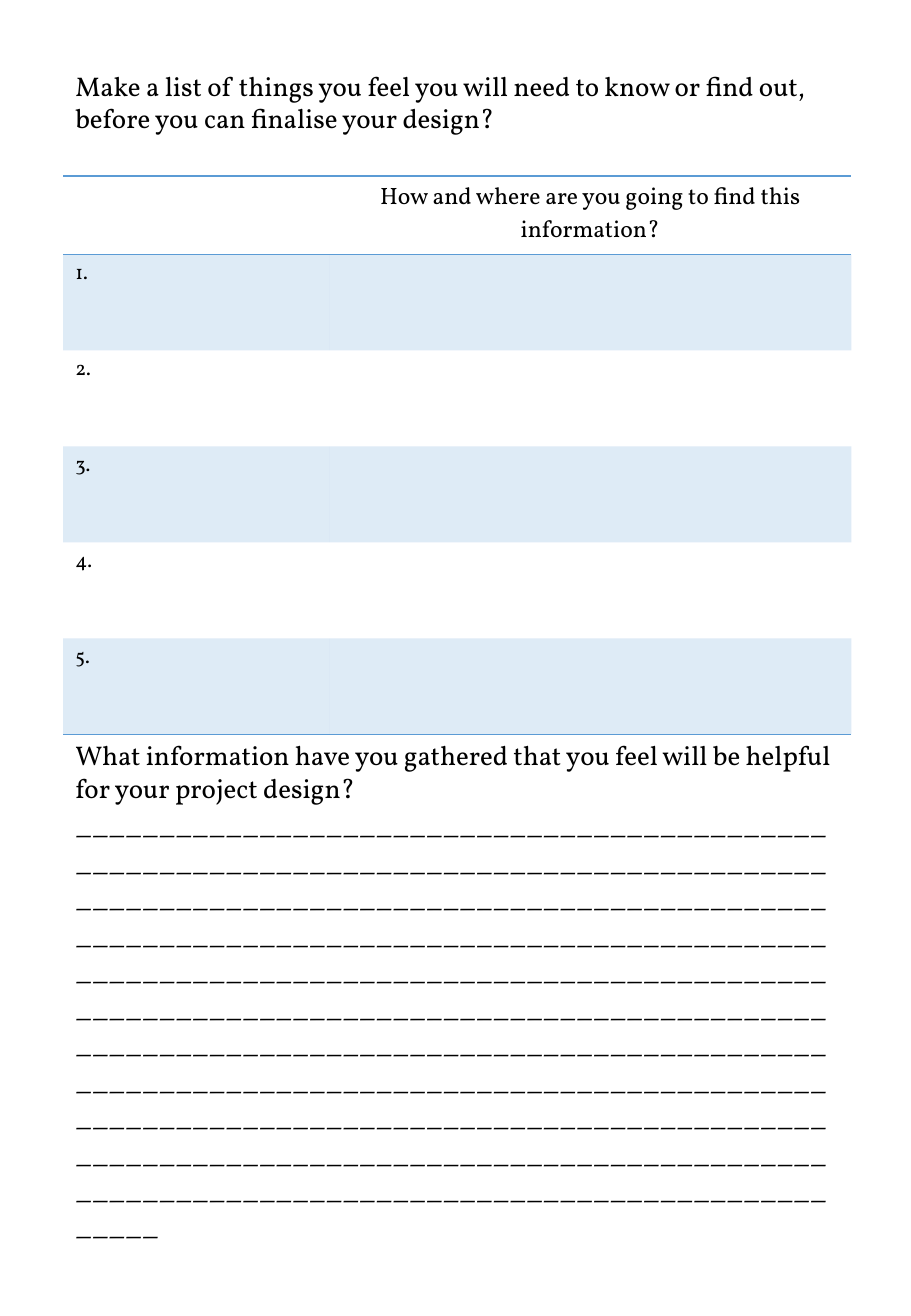
from dataclasses import dataclass

from lxml.etree import SubElement
from pptx import Presentation
from pptx.dml.color import RGBColor
from pptx.enum.text import MSO_ANCHOR, MSO_AUTO_SIZE, PP_ALIGN
from pptx.oxml.ns import qn
from pptx.util import Inches, Pt


@dataclass(frozen=True)
class Theme:
    font: str = "Vollkorn"
    ink: str = "000000"
    accent: str = "5B9BD5"
    band_alpha: int = 20
    question: int = 16
    header: int = 14
    number: int = 12
    writing_line: int = 18
    border: float = 1


@dataclass(frozen=True)
class TextRun:
    text: str
    size: int


@dataclass(frozen=True)
class Block:
    """A question and its place, in inches."""
    idx: int
    top: float
    height: float
    runs: tuple[TextRun, ...]


THEME = Theme()
LEFT, WIDTH = 0.52, 6.48
NO_STYLE = "{2D5ABB26-0587-4C30-8999-92F81FD0307C}"
COLUMNS = (2.19, 4.3)
TABLE_TOP, HEADER_HEIGHT, ROW_HEIGHT, ROW_COUNT = 1.45, 0.64, 0.79, 5
HEADER = "How and where are you going to find this information?"

BLOCKS = (
    Block(0, 0.52, 0.9, (
        TextRun("Make a list of things you feel you will need to know or find out, "
                "before you can finalise your design?", THEME.question),)),
    Block(1, 6.03, 4.75, (
        TextRun("What information have you gathered that you feel will be helpful "
                "for your project design? ", THEME.question),
        TextRun("_" * 500, THEME.writing_line))),
)


def add_run(p, run: TextRun) -> None:
    r = p.add_run()
    r.text = run.text
    r.font.name = THEME.font
    r.font.size = Pt(run.size)
    r.font.bold = False
    r.font.color.rgb = RGBColor.from_string(THEME.ink)


def fill_block(s, block: Block) -> None:
    sp = s.placeholders[block.idx]
    sp.left, sp.top = Inches(LEFT), Inches(block.top)
    sp.width, sp.height = Inches(WIDTH), Inches(block.height)
    tf = sp.text_frame
    tf.word_wrap = True
    tf.auto_size = MSO_AUTO_SIZE.NONE
    tf.vertical_anchor = MSO_ANCHOR.TOP
    p = tf.paragraphs[0]
    p.alignment = PP_ALIGN.LEFT
    p.line_spacing = 1.0
    p.space_before = Pt(0)
    pPr = p._p.get_or_add_pPr()
    pPr.set("marL", "0")
    pPr.set("indent", "0")
    SubElement(pPr, qn("a:buNone"))
    for run in block.runs:
        add_run(p, run)


def add_border(cell, side: str) -> None:
    """Draw one cell edge: T for top, B for bottom."""
    ln = SubElement(cell._tc.get_or_add_tcPr(), qn(f"a:ln{side}"),
                    w=str(Pt(THEME.border)))
    fill = SubElement(ln, qn("a:solidFill"))
    SubElement(fill, qn("a:srgbClr"), val=THEME.accent)


def fill_cell(cell, banded: bool) -> None:
    if not banded:
        cell.fill.background()
        return
    cell.fill.solid()
    cell.fill.fore_color.rgb = RGBColor.from_string(THEME.accent)
    color = cell._tc.tcPr.find(f".//{qn('a:solidFill')}[last()]/{qn('a:srgbClr')}")
    color = cell._tc.tcPr.find(qn("a:solidFill")).find(qn("a:srgbClr"))
    SubElement(color, qn("a:alpha"), val=str(THEME.band_alpha * 1000))


def add_research_table(s) -> None:
    height = HEADER_HEIGHT + ROW_COUNT * ROW_HEIGHT
    table = s.shapes.add_table(
        ROW_COUNT + 1, len(COLUMNS), Inches(LEFT), Inches(TABLE_TOP),
        Inches(sum(COLUMNS)), Inches(height)).table
    table.first_row = table.horz_banding = False
    table._tbl.tblPr.find(qn("a:tableStyleId")).text = NO_STYLE
    for column, width in zip(table.columns, COLUMNS):
        column.width = Inches(width)
    for i, row in enumerate(table.rows):
        row.height = Inches(ROW_HEIGHT if i else HEADER_HEIGHT)
        sides = "TB" if i == 0 else "B" if i == ROW_COUNT else ""
        for cell in row.cells:
            for side in sides:
                add_border(cell, side)
            fill_cell(cell, banded=i % 2 == 1)
        if i:
            add_run(row.cells[0].text_frame.paragraphs[0],
                    TextRun(f"{i}.", THEME.number))
    p = table.cell(0, 1).text_frame.paragraphs[0]
    p.alignment = PP_ALIGN.CENTER
    add_run(p, TextRun(HEADER, THEME.header))


def main() -> None:
    prs = Presentation()
    prs.slide_width, prs.slide_height = Inches(7.5), Inches(10.83)
    s = prs.slides.add_slide(prs.slide_layouts[1])
    for block in BLOCKS:
        fill_block(s, block)
    add_research_table(s)
    prs.save("out.pptx")


if __name__ == "__main__":
    main()
